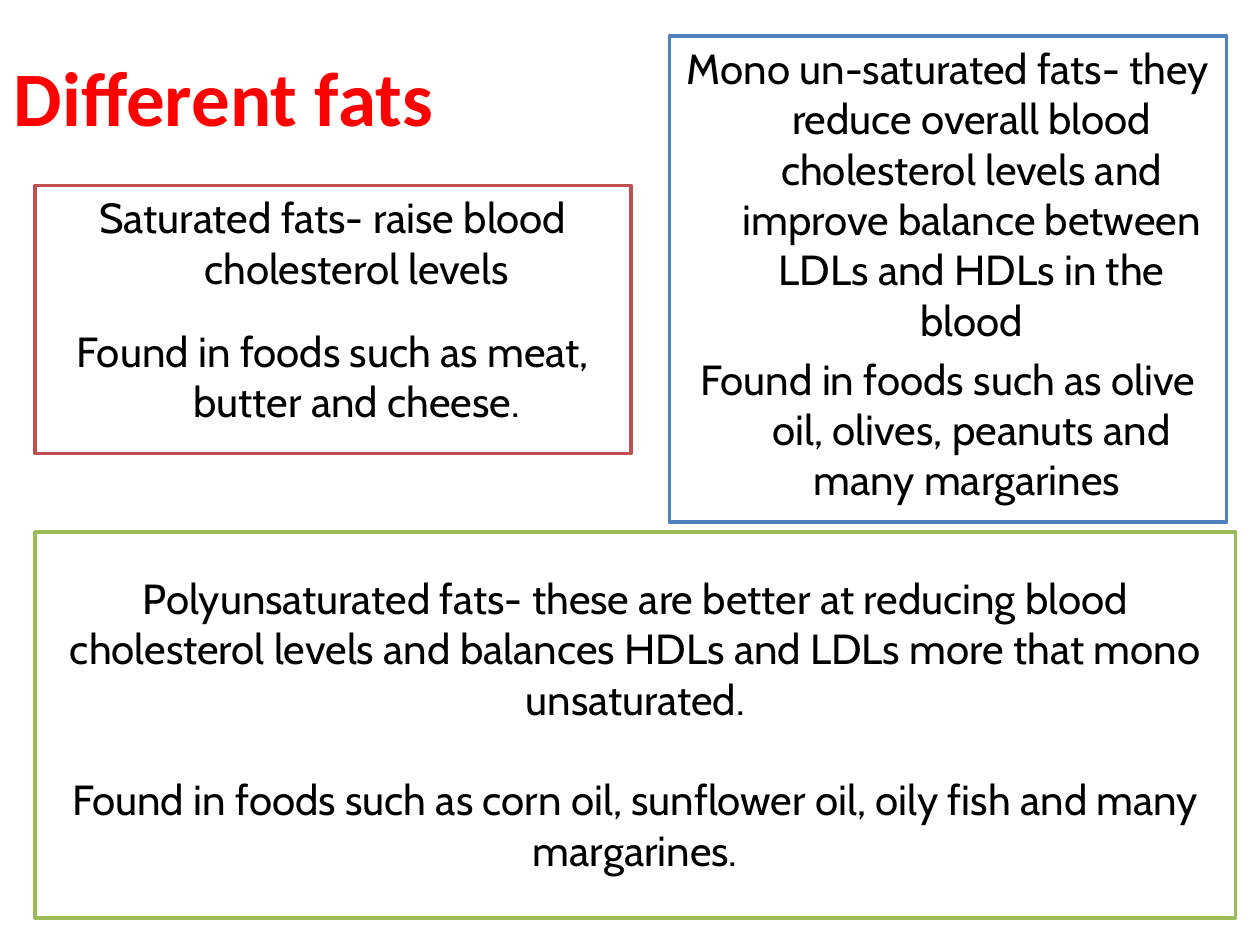
"""Build the slide comparing saturated, monounsaturated and polyunsaturated fats."""
from pptx import Presentation
from pptx.dml.color import RGBColor
from pptx.enum.shapes import MSO_SHAPE
from pptx.enum.text import MSO_ANCHOR, PP_ALIGN
from pptx.util import Pt

RECTANGLE = MSO_SHAPE.RECTANGLE
TOP, MIDDLE = MSO_ANCHOR.TOP, MSO_ANCHOR.MIDDLE
LEFT, CENTER = PP_ALIGN.LEFT, PP_ALIGN.CENTER
WHITE = RGBColor(0xFF, 0xFF, 0xFF)
BLACK = RGBColor(0, 0, 0)
RED = RGBColor(0xFF, 0, 0)
BRICK = RGBColor(0xC0, 0x50, 0x4D)
BLUE = RGBColor(0x4F, 0x81, 0xBD)
GREEN = RGBColor(0x9B, 0xBB, 0x59)

TITLE = "Different fats"
TITLE_BOX = (0.7, 9.4, 648, 90)
TITLE_FONT = {"name": "Calibri", "size": Pt(44), "bold": True}
BODY_FONT = {"name": "Cabin", "size": Pt(24)}
HANGING = 27

FATS = [
    {"box": (20, 106, 340.5, 153.2), "color": BRICK, "hanging": HANGING,
     "top_inset": 3.6, "gap": 18.8,
     "facts": ["Saturated fats- raise blood cholesterol levels",
               "Found in foods such as meat, butter and cheese."]},
    {"box": (382.5, 20.6, 318.3, 277.7), "color": BLUE, "hanging": HANGING,
     "top_inset": 3.6, "gap": 4.8,
     "facts": ["Mono un-saturated fats- they reduce overall blood cholesterol "
               "levels and improve balance between LDLs and HDLs in the blood",
               "Found in foods such as olive oil, olives, peanuts and many "
               "margarines "]},
    {"box": (20, 304, 686, 220.5), "color": GREEN, "hanging": 0,
     "top_inset": 23, "gap": 28.8,
     "facts": ["Polyunsaturated fats- these are better at reducing blood "
               "cholesterol levels and balances HDLs and LDLs more that mono "
               "unsaturated.",
               "Found in foods such as corn oil, sunflower oil, oily fish and "
               "many margarines."]},
]


def apply(target, values):
    for name, value in values.items():
        setattr(target, name, value)


def place(part, box):
    apply(part, dict(zip(("left", "top", "width", "height"), map(Pt, box))))


def write(paragraph, text, font, color, align):
    paragraph.alignment = align
    run = paragraph.add_run()
    run.text = text
    apply(run.font, font)
    run.font.color.rgb = color


def add_fat(slide, fat):
    panel = slide.shapes.add_shape(RECTANGLE, *map(Pt, fat["box"]))
    panel.shadow.inherit = False
    panel.fill.solid()
    panel.fill.fore_color.rgb = WHITE
    panel.line.color.rgb = fat["color"]
    panel.line.width = Pt(2)
    frame = panel.text_frame
    apply(frame, {"word_wrap": True, "vertical_anchor": TOP,
                  "margin_top": Pt(fat["top_inset"])})
    for index, fact in enumerate(fat["facts"]):
        paragraph = frame.add_paragraph() if index else frame.paragraphs[0]
        write(paragraph, fact, BODY_FONT, BLACK, CENTER)
        paragraph.space_before = Pt(fat["gap"] if index else 0)
        properties = paragraph._p.get_or_add_pPr()
        properties.set("marL", str(Pt(fat["hanging"])))
        properties.set("indent", str(-Pt(fat["hanging"])))


def main():
    deck = Presentation()
    apply(deck, {"slide_width": Pt(720), "slide_height": Pt(540)})
    slide = deck.slides.add_slide(deck.slide_layouts[5])
    title = slide.shapes.title
    place(title, TITLE_BOX)
    title.text_frame.vertical_anchor = MIDDLE
    write(title.text_frame.paragraphs[0], TITLE, TITLE_FONT, RED, LEFT)
    for fat in FATS:
        add_fat(slide, fat)
    deck.save("out.pptx")


if __name__ == "__main__":
    main()
